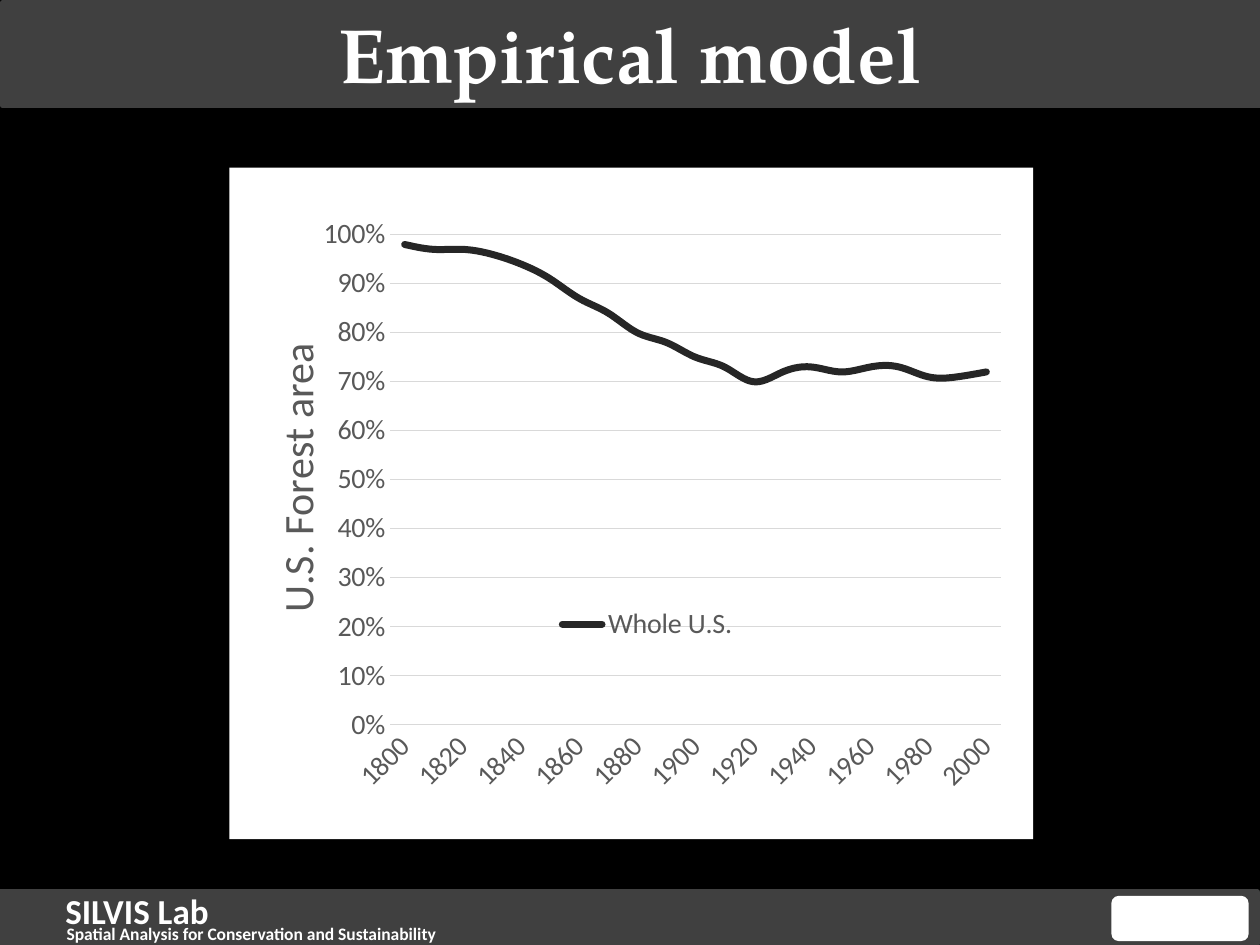
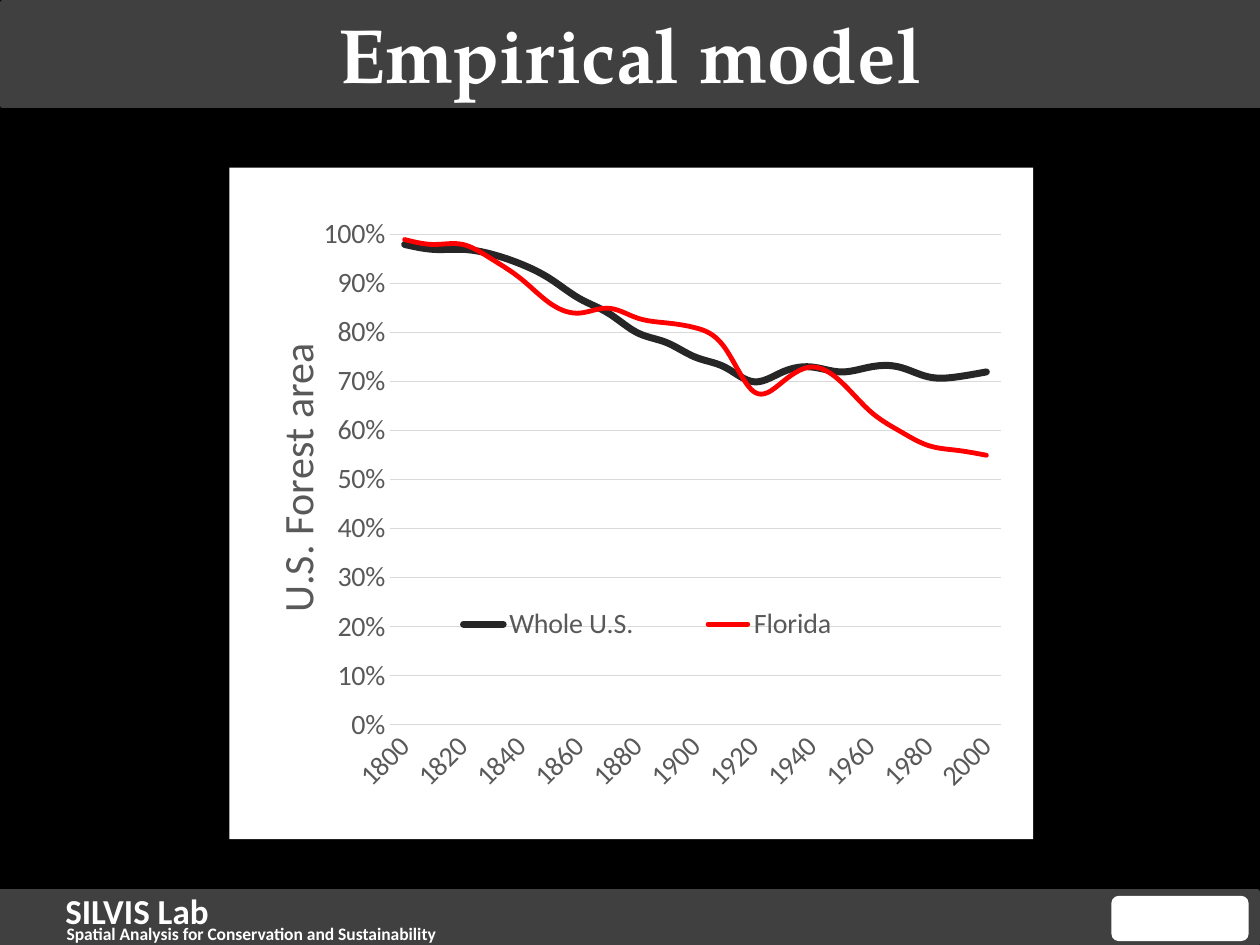
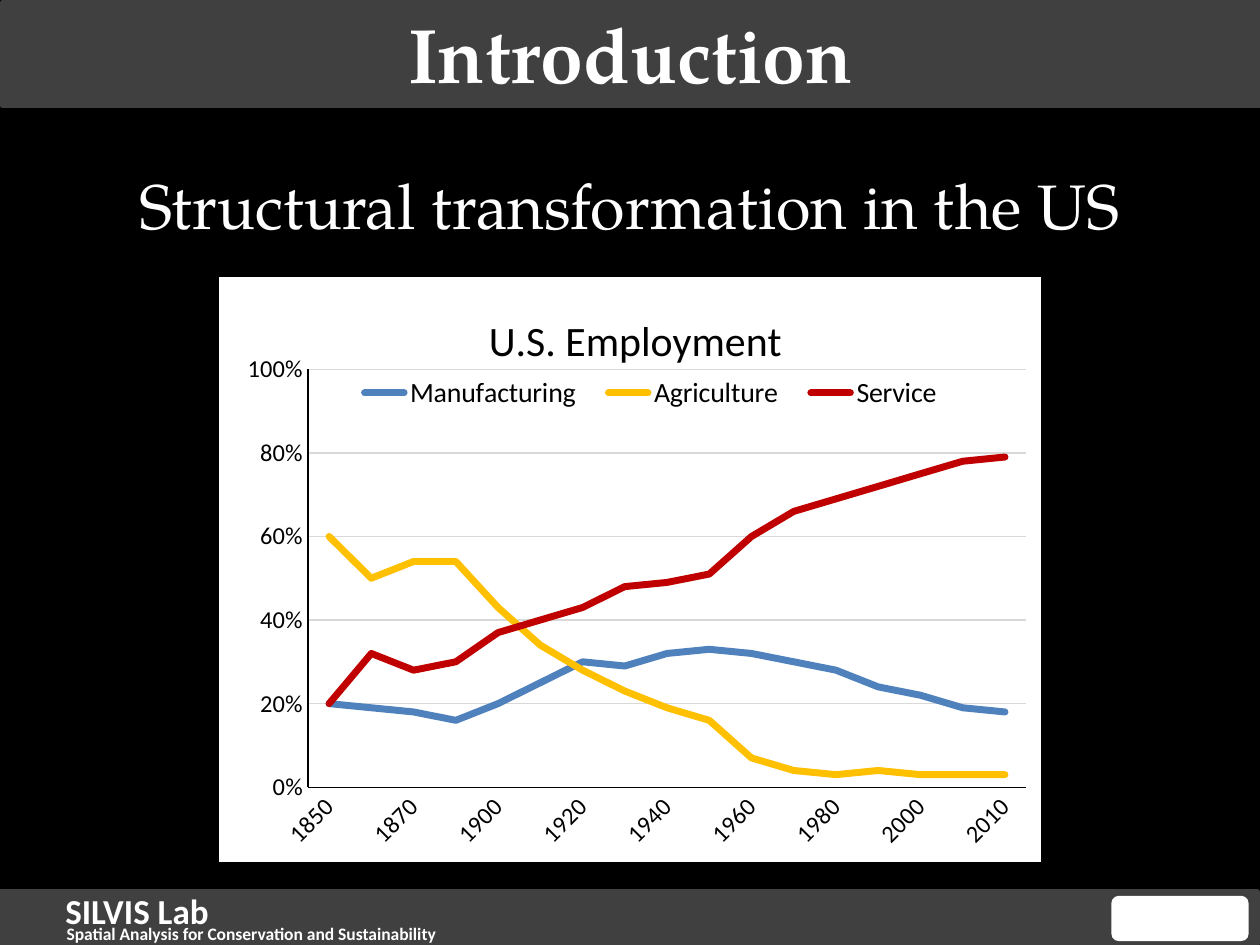
import pptx
import pptx.chart.data
import pptx.dml.color
import pptx.enum.chart
import pptx.enum.shapes
import pptx.enum.text
import pptx.oxml
import pptx.oxml.ns
import pptx.util
from lxml import etree

Inches, Pt = pptx.util.Inches, pptx.util.Pt
qn = pptx.oxml.ns.qn

COLORS = {
    "background": "000000", "band": "404040", "white": "FFFFFF", "black": "000000",
    "gray": "595959", "grid": "D9D9D9", "whole": "262626", "florida": "FF0000",
    "manufacturing": "4F81BD", "agriculture": "FFC000", "service": "C00000",
}
SERIF, SANS = "TeX Gyre Pagella", "Calibri"

BANDS = [(0.02, 0.02, 9.98, 0.82), (0, 7.08, 9.98, 0.41)]
BADGE = (8.82, 7.11, 1.09, 0.36)
FOOTER = [
    ("SILVIS Lab", 20, (0.42, 7.01, 2.43, 0.44)),
    ("Spatial Analysis for Conservation and Sustainability", 10, (0.43, 7.28, 4.92, 0.17)),
]

# Series: name, colour, line width in points, values in percent
WHOLE_US = ("Whole U.S.", "whole", 4,
            [98, 97, 97, 96, 94, 91, 87, 84, 80, 78, 75, 73, 70, 72, 73, 72, 73, 73, 71, 71, 72])
FLORIDA = ("Florida", "florida", 2.75,
           [99, 98, 98, 95, 91, 86, 84, 85, 83, 82, 81, 77, 68, 70, 73, 70, 64, 60, 57, 56, 55])
EMPLOYMENT = [
    ("Manufacturing", "manufacturing", 4,
     [20, 19, 18, 16, 20, 25, 30, 29, 32, 33, 32, 30, 28, 24, 22, 19, 18]),
    ("Agriculture", "agriculture", 4,
     [60, 50, 54, 54, 43, 34, 28, 23, 19, 16, 7, 4, 3, 4, 3, 3, 3]),
    ("Service", "service", 4,
     [20, 32, 28, 30, 37, 40, 43, 48, 49, 51, 60, 66, 69, 72, 75, 78, 79]),
]

FOREST_CHART = {
    "box": (1.82, 1.33, 6.38, 5.33), "years": range(1800, 2001, 10), "smooth": True,
    "text": "gray", "axis_size": 16, "cat_line": "grid", "val_line": None, "step": 0.1,
    "axis_title": "U.S. Forest area", "title_at": (0.04, 0.25),
    "plot": (0.2, 0.1, 0.76, 0.73), "legend": (0.21, 0.64, 0.62, 0.08),
}
EMPLOYMENT_CHART = {
    "box": (1.71, 2.17, 6.58, 4.7), "smooth": False,
    "years": [1850, 1860, 1870, 1880, *range(1900, 2001, 10), 2008, 2010],
    "text": "black", "axis_size": 14, "cat_line": "black", "val_line": "black", "step": 0.2,
    "title": "U.S. Employment", "title_at": (0.32, 0.05), "border": "black",
    "plot": (0.11, 0.16, 0.87, 0.71), "legend": (0.15, 0.16, 0.75, 0.08),
    "series": EMPLOYMENT,
}
SLIDES = [
    {"title": "Empirical model", "chart": {**FOREST_CHART, "series": [WHOLE_US]}},
    {"title": "Empirical model", "chart": {**FOREST_CHART, "series": [WHOLE_US, FLORIDA]}},
    {"title": "Introduction", "subtitle": "Structural transformation in the US",
     "chart": EMPLOYMENT_CHART},
]


def rgb(name):
    return pptx.dml.color.RGBColor.from_string(COLORS[name])


def inches(box):
    return [Inches(v) for v in box]


def style_font(font, size, color, name=SANS, bold=False):
    font.size, font.name, font.bold = Pt(size), name, bold
    font.color.rgb = rgb(color)


def style_line(line, color, width=0.75):
    if color is None:
        line.fill.background()
    else:
        line.color.rgb = rgb(color)
        line.width = Pt(width)


def add_shape(slide, kind, box, fill, line=None):
    sp = slide.shapes.add_shape(kind, *inches(box))
    sp.shadow.inherit = False
    sp.fill.solid()
    sp.fill.fore_color.rgb = rgb(fill)
    style_line(sp.line, line, 3)
    return sp


def add_text(slide, text, box, size, name=SANS, bold=False):
    sp = slide.shapes.add_textbox(*inches(box))
    sp.text_frame.word_wrap = True
    p = sp.text_frame.paragraphs[0]
    p.text = text
    style_font(p.font, size, "white", name, bold)
    return sp


def center(sp):
    sp.text_frame.vertical_anchor = pptx.enum.text.MSO_ANCHOR.MIDDLE
    sp.text_frame.paragraphs[0].alignment = pptx.enum.text.PP_ALIGN.CENTER


def furnish_layout(layout, slide):
    """Draw bands and footer on a slide, then move them behind the layout's placeholders."""
    shape = pptx.enum.shapes.MSO_SHAPE
    parts = [add_shape(slide, shape.RECTANGLE, box, "band", "band") for box in BANDS]
    parts += [add_text(slide, text, box, size, bold=True) for text, size, box in FOOTER]
    parts.append(add_shape(slide, shape.ROUNDED_RECTANGLE, BADGE, "white"))
    for i, sp in enumerate(parts):
        layout.shapes.element.insert(2 + i, sp.element)
    title = layout.placeholders[0]
    title.left, title.top, title.width, title.height = inches((0.01, 0, 9.99, 0.83))


def chart_part(chart, tag):
    return chart.element.find(".//" + qn(tag))


def place(element, numbers, inner=False):
    """Give a chart part a manual layout, in fractions of the chart."""
    tag = qn("c:layout")
    for old in element.findall(tag):
        element.remove(old)
    layout = etree.Element(tag)
    manual = etree.SubElement(layout, qn("c:manualLayout"))
    settings = [("layoutTarget", "inner")] if inner else []
    settings += [("xMode", "edge"), ("yMode", "edge"), *zip("xywh", numbers)]
    for key, value in settings:
        etree.SubElement(manual, qn("c:" + key)).set("val", str(value))
    overlay = element.find(qn("c:overlay"))
    if overlay is None:
        element.insert(0, layout)
    else:
        overlay.addprevious(layout)


def set_title(title, text, at, color):
    p = title.text_frame.paragraphs[0]
    p.text = text
    style_font(p.font, 24, color)
    place(title.element, at)


def fill_chart_area(chart, border):
    line = (f'<a:ln w="25400"><a:solidFill><a:srgbClr val="{COLORS[border]}"/></a:solidFill></a:ln>'
            if border else "<a:ln><a:noFill/></a:ln>")
    area = pptx.oxml.parse_xml(
        f'<c:spPr {pptx.oxml.ns.nsdecls("c", "a")}><a:solidFill>'
        f'<a:srgbClr val="{COLORS["white"]}"/></a:solidFill>{line}</c:spPr>')
    chart_part(chart, "c:chart").addnext(area)


def add_line_chart(slide, c):
    data = pptx.chart.data.CategoryChartData(number_format="0%")
    data.categories = [str(year) for year in c["years"]]
    for name, _, _, values in c["series"]:
        data.add_series(name, [v / 100 for v in values])
    xl = pptx.enum.chart
    chart = slide.shapes.add_chart(xl.XL_CHART_TYPE.LINE, *inches(c["box"]), data).chart
    style_font(chart.font, 16, c["text"])
    fill_chart_area(chart, c.get("border"))

    for ser, (_, color, width, _) in zip(chart.plots[0].series, c["series"]):
        ser.smooth = c["smooth"]
        ser.marker.style = xl.XL_MARKER_STYLE.NONE
        style_line(ser.format.line, color, width)
    for element in chart.element.iter(qn("c:ser")):
        element.find(qn("c:spPr")).find(qn("a:ln")).set("cap", "rnd")

    cat, val = chart.category_axis, chart.value_axis
    for axis, line in ((cat, c["cat_line"]), (val, c["val_line"])):
        axis.major_tick_mark = axis.minor_tick_mark = xl.XL_TICK_MARK.NONE
        style_font(axis.tick_labels.font, c["axis_size"], c["text"])
        style_line(axis.format.line, line)
    labels = chart_part(chart, "c:catAx").find(qn("c:txPr"))
    labels.find(qn("a:bodyPr")).set("rot", "-2700000")
    val.minimum_scale, val.maximum_scale, val.major_unit = 0, 1, c["step"]
    val.tick_labels.number_format = "0%"
    val.tick_labels.number_format_is_linked = False
    val.has_major_gridlines = True
    style_line(val.major_gridlines.format.line, "grid")

    chart.has_title = "title" in c
    if chart.has_title:
        set_title(chart.chart_title, c["title"], c["title_at"], c["text"])
    if "axis_title" in c:
        title = val.axis_title
        set_title(title, c["axis_title"], c["title_at"], c["text"])
        title.element.find(".//" + qn("a:bodyPr")).set("rot", "-5400000")

    chart.has_legend = True
    chart.legend.position = xl.XL_LEGEND_POSITION.BOTTOM
    chart.legend.include_in_layout = False
    style_font(chart.legend.font, 16, c["text"])
    place(chart_part(chart, "c:legend"), c["legend"])
    place(chart_part(chart, "c:plotArea"), c["plot"], inner=True)


def main():
    prs = pptx.Presentation()
    prs.slide_width, prs.slide_height = Inches(10), Inches(7.5)
    fill = prs.slide_master.background.fill
    fill.solid()
    fill.fore_color.rgb = rgb("background")
    layout = prs.slide_layouts.get_by_name("Title Only")
    for i, content in enumerate(SLIDES):
        slide = prs.slides.add_slide(layout)
        if i == 0:
            furnish_layout(layout, slide)
        title = slide.shapes.title
        title.text_frame.text = content["title"]
        style_font(title.text_frame.paragraphs[0].font, 44, "white", SERIF, True)
        center(title)
        if "subtitle" in content:
            center(add_text(slide, content["subtitle"], (0.5, 1, 9, 1.25), 36, SERIF))
        add_line_chart(slide, content["chart"])
    prs.save("out.pptx")


if __name__ == "__main__":
    main()
